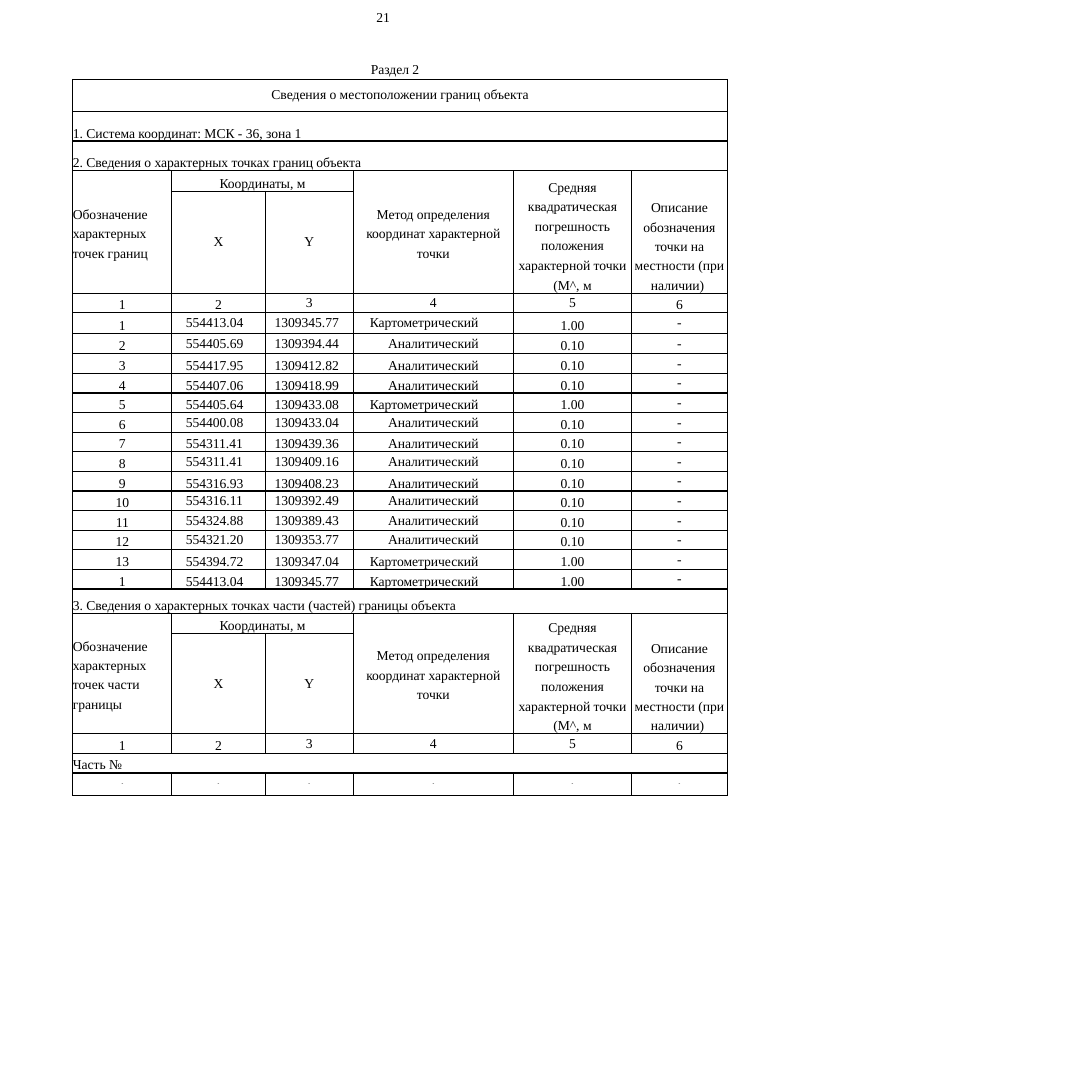
from lxml import etree
from pptx import Presentation
from pptx import util as u
from pptx.dml.color import RGBColor
from pptx.enum import text
from pptx.oxml import ns

FONT = "Times New Roman"
BLACK = "000000"
LEFT, CENTER, JUSTIFY = text.PP_ALIGN.LEFT, text.PP_ALIGN.CENTER, text.PP_ALIGN.JUSTIFY
MIDDLE, BOTTOM = text.MSO_ANCHOR.MIDDLE, text.MSO_ANCHOR.BOTTOM

COLUMNS = [1.06, 1, 0.94, 1.72, 1.26, 1.03]
ROWS = ([0.34, 0.32, 0.32, 0.22, 1.09, 0.21] + [0.22] * 2 + [0.21] * 12
        + [0.26, 0.22, 1.07, 0.21, 0.21, 0.24])
CARTO, ANALYTIC = "Картометрический", "Аналитический"
ERRORS = {CARTO: "1.00", ANALYTIC: "0.10"}
# point, X, Y, method, anchor of the coordinates and the method
POINTS = [
    ("1", "554413.04", "1309345.77", CARTO, MIDDLE),
    ("2", "554405.69", "1309394.44", ANALYTIC, MIDDLE),
    ("3", "554417.95", "1309412.82", ANALYTIC, BOTTOM),
    ("4", "554407.06", "1309418.99", ANALYTIC, BOTTOM),
    ("5", "554405.64", "1309433.08", CARTO, BOTTOM),
    ("6", "554400.08", "1309433.04", ANALYTIC, MIDDLE),
    ("7", "554311.41", "1309439.36", ANALYTIC, BOTTOM),
    ("8", "554311.41", "1309409.16", ANALYTIC, MIDDLE),
    ("9", "554316.93", "1309408.23", ANALYTIC, BOTTOM),
    ("10", "554316.11", "1309392.49", ANALYTIC, MIDDLE),
    ("11", "554324.88", "1309389.43", ANALYTIC, MIDDLE),
    ("12", "554321.20", "1309353.77", ANALYTIC, MIDDLE),
    ("13", "554394.72", "1309347.04", CARTO, BOTTOM),
    ("1", "554413.04", "1309345.77", CARTO, BOTTOM),
]


def color(value):
    return RGBColor.from_string(value)


def format_paragraph(p, align=LEFT, size=10.5, spacing=None, indent=0):
    p.alignment = align
    if spacing:
        p.line_spacing = u.Pt(spacing)
    if indent:
        p._p.get_or_add_pPr().set("marL", str(u.Inches(indent)))
    for r in p.runs:
        r.font.name = FONT
        r.font.size = u.Pt(size)
        r.font.color.rgb = color(BLACK)


def add_label(s, content, left, top, width, height):
    tf = s.shapes.add_textbox(*map(u.Inches, (left, top, width, height))).text_frame
    tf.margin_left = tf.margin_right = tf.margin_top = tf.margin_bottom = 0
    tf.word_wrap = False
    tf.text = content
    format_paragraph(tf.paragraphs[0])


def style_cell(cell):
    """Clear the fill and margins and draw a black border on all four sides."""
    cell.margin_left = cell.margin_right = cell.margin_top = cell.margin_bottom = 0
    cell.fill.background()
    props = cell._tc.get_or_add_tcPr()
    for i, side in enumerate(("lnL", "lnR", "lnT", "lnB")):
        line = etree.Element(ns.qn(f"a:{side}"), w=str(u.Pt(1)))
        fill = etree.SubElement(line, ns.qn("a:solidFill"))
        etree.SubElement(fill, ns.qn("a:srgbClr"), val=BLACK)
        props.insert(i, line)


def write(cell, content, anchor=MIDDLE, align=CENTER, **style):
    cell.vertical_anchor = anchor
    cell.text_frame.text = content
    format_paragraph(cell.text_frame.paragraphs[0], align, **style)


def add_band(table, row, content, anchor=BOTTOM, align=LEFT):
    """Write one cell across the whole width."""
    table.cell(row, 0).merge(table.cell(row, len(COLUMNS) - 1))
    write(table.cell(row, 0), content, anchor, align)


def add_header(table, row, point_title, point_align):
    """Write the two-level column header and the row of column numbers."""
    for col in (0, 3, 4, 5):
        table.cell(row, col).merge(table.cell(row + 1, col))
    table.cell(row, 1).merge(table.cell(row, 2))
    write(table.cell(row, 0), point_title, align=point_align, spacing=14.9)
    write(table.cell(row, 1), "Координаты, м", BOTTOM)
    write(table.cell(row + 1, 1), "X")
    write(table.cell(row + 1, 2), "Y")
    write(table.cell(row, 3), "Метод определения координат характерной точки", spacing=14.9)
    write(table.cell(row, 4), "Средняя квадратическая погрешность положения "
          "характерной точки (М^, м", BOTTOM, spacing=15.1)
    description = table.cell(row, 5)
    write(description, "Описание обозначения точки на местности (при", BOTTOM, spacing=14.9)
    p = description.text_frame.add_paragraph()
    p.text = "наличии)"
    format_paragraph(p, spacing=14.9, indent=0.21)
    for col in range(len(COLUMNS)):
        anchor = BOTTOM if col in (0, 1, 5) else MIDDLE
        write(table.cell(row + 2, col), str(col + 1), anchor)


def add_point(table, row, point, x, y, method, anchor):
    write(table.cell(row, 0), point, BOTTOM)
    write(table.cell(row, 1), x, anchor, LEFT, indent=0.15)
    write(table.cell(row, 2), y, anchor, LEFT, indent=0.1)
    if method == CARTO:
        write(table.cell(row, 3), method, anchor, LEFT, indent=0.18)
    else:
        write(table.cell(row, 3), method, anchor)
    write(table.cell(row, 4), ERRORS[method], BOTTOM)
    write(table.cell(row, 5), "-")


def add_grid(s):
    frame = s.shapes.add_table(len(ROWS), len(COLUMNS), u.Inches(0.78), u.Inches(0.85),
                               u.Inches(sum(COLUMNS)), u.Inches(sum(ROWS)))
    table = frame.table
    table.first_row = table.horz_banding = False
    for column, width in zip(table.columns, COLUMNS):
        column.width = u.Inches(width)
    for row, height in zip(table.rows, ROWS):
        row.height = u.Inches(height)
    for cell in table.iter_cells():
        style_cell(cell)
    return table


def main():
    prs = Presentation()
    prs.slide_width = prs.slide_height = u.Inches(11.69)
    s = prs.slides.add_slide(prs.slide_layouts[6])
    add_label(s, "21", 4.03, 0.1, 0.19, 0.16)
    add_label(s, "Раздел 2", 3.97, 0.65, 0.63, 0.17)

    table = add_grid(s)
    add_band(table, 0, "Сведения о местоположении границ объекта", MIDDLE, CENTER)
    add_band(table, 1, "1. Система координат: МСК - 36, зона 1")
    add_band(table, 2, "2. Сведения о характерных точках границ объекта")
    add_header(table, 3, "Обозначение характерных точек границ", JUSTIFY)
    for row, point in enumerate(POINTS, 6):
        add_point(table, row, *point)
    add_band(table, 20, "3. Сведения о характерных точках части (частей) границы объекта")
    add_header(table, 21, "Обозначение характерных точек части границы", LEFT)
    add_band(table, 24, "Часть №")
    for col in range(len(COLUMNS)):
        write(table.cell(25, col), "-", size=4)

    prs.save("out.pptx")


if __name__ == "__main__":
    main()
